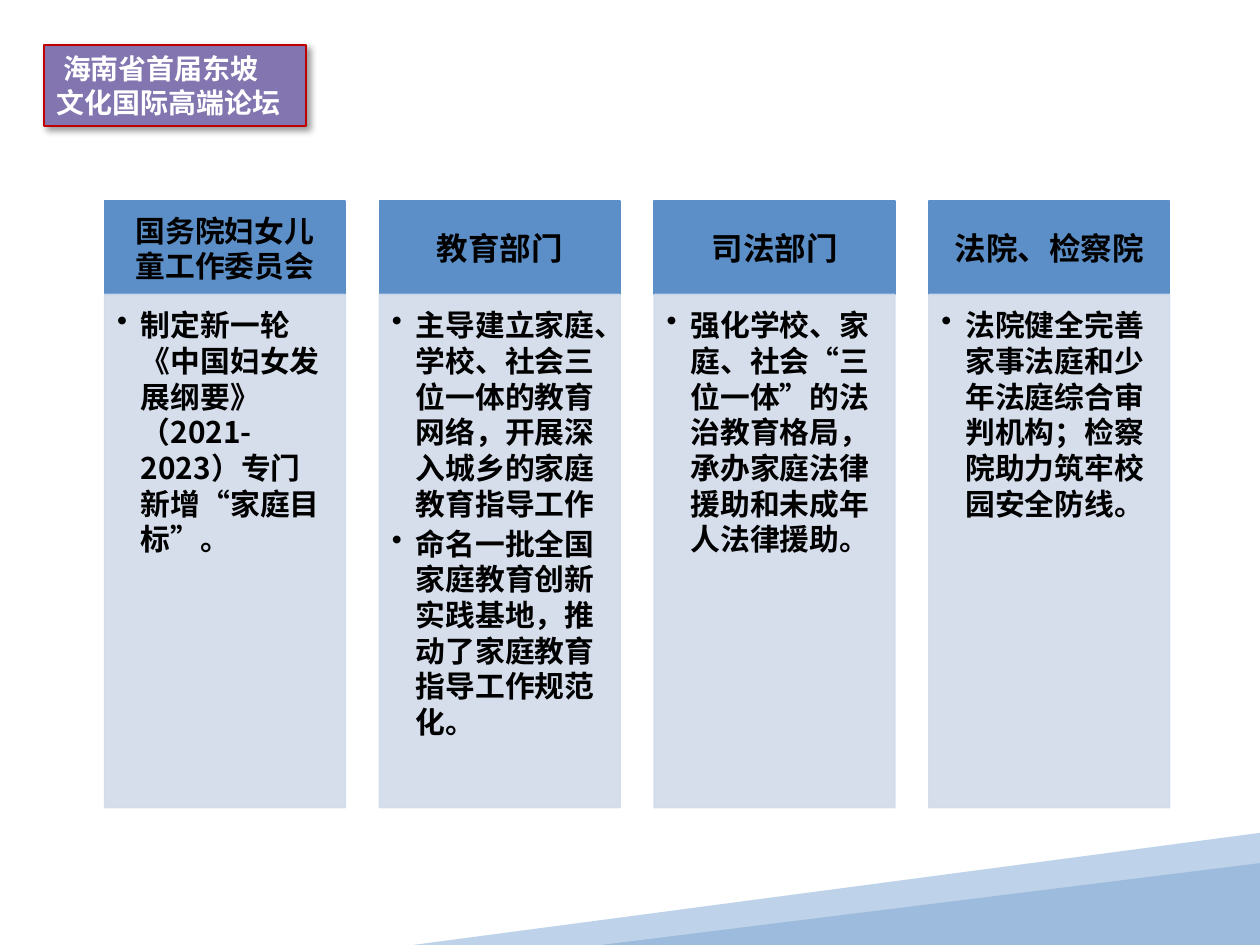
from dataclasses import dataclass

from lxml.etree import SubElement
from pptx import Presentation
from pptx.dml.color import RGBColor
from pptx.enum.lang import MSO_LANGUAGE_ID
from pptx.enum.shapes import MSO_SHAPE
from pptx.enum.text import MSO_ANCHOR, MSO_AUTO_SIZE, PP_ALIGN
from pptx.oxml.ns import qn
from pptx.util import Cm, Pt


@dataclass(frozen=True)
class Theme:
    font: str = "Noto Sans CJK SC"
    ink: str = "000000"
    heading_fill: str = "5C8FC7"
    duties_fill: str = "D2DBEB"
    badge_fill: str = "8376B0"
    badge_line: str = "C00000"
    badge_ink: str = "FFFFFF"
    light_wave: str = "BED2E9"
    deep_wave: str = "9DBCDD"
    badge_size: float = 16
    heading_size: float = 18
    text_size: float = 17
    line_factor: float = 1.2


FORUM = [" 海南省首届东坡", "文化国际高端论坛"]

DEPARTMENTS = [
    ("国务院妇女儿童工作委员会",
     ["制定新一轮《中国妇女发展纲要》（2021-2023）专门新增“家庭目标”。"]),
    ("教育部门",
     ["主导建立家庭、学校、社会三位一体的教育网络，开展深入城乡的家庭教育指导工作",
      "命名一批全国家庭教育创新实践基地，推动了家庭教育指导工作规范化。"]),
    ("司法部门",
     ["强化学校、家庭、社会“三位一体”的法治教育格局，承办家庭法律援助和未成年人法律援助。"]),
    ("法院、检察院",
     ["法院健全完善家事法庭和少年法庭综合审判机构；检察院助力筑牢校园安全防线。"]),
]

COLUMN_LEFT, COLUMN_PITCH, COLUMN_WIDTH = 2.11, 5.54, 4.85
HEADING_TOP, HEADING_HEIGHT, DUTIES_HEIGHT = 4.06, 1.88, 10.34
LONGEST_ONE_LINE_HEADING = 6


def set_all(target, values):
    for name, value in values.items():
        setattr(target, name, value)


class SlideBuilder:
    def __init__(self, slide, theme):
        self.slide = slide
        self.theme = theme

    def paint(self, shape, fill, line=None):
        shape.shadow.inherit = False
        shape.fill.solid()
        shape.fill.fore_color.rgb = RGBColor.from_string(fill)
        if line:
            shape.line.color.rgb = RGBColor.from_string(line)
            shape.line.width = Pt(1)
        else:
            shape.line.fill.background()

    def put_text(self, shape, lines, size, color, frame, paragraph):
        """Fill a shape with one paragraph per line, all in the same format."""
        set_all(shape.text_frame, {"word_wrap": True, **frame})
        shape.text_frame.text = "\n".join(lines)
        for item in shape.text_frame.paragraphs:
            set_all(item, {"line_spacing": Pt(round(size * self.theme.line_factor, 1)),
                           "space_before": Pt(0), **paragraph})
            for run in item.runs:
                set_all(run.font, {"name": self.theme.font, "size": Pt(size), "bold": True,
                                   "language_id": MSO_LANGUAGE_ID.SIMPLIFIED_CHINESE})
                run.font.color.rgb = RGBColor.from_string(color)
                SubElement(run.font._element, qn("a:ea"), typeface=self.theme.font)

    def waves(self):
        outline = self.slide.shapes.build_freeform(Cm(25.4), Cm(16.79))
        corners = [(25.4, 18.9), (17.09, 19.05), (8.33, 19.05)]
        outline.add_line_segments([(Cm(x), Cm(y)) for x, y in corners])
        self.paint(outline.convert_to_shape(), self.theme.light_wave)
        front = self.slide.shapes.add_shape(
            MSO_SHAPE.ISOSCELES_TRIANGLE, Cm(12.12), Cm(17.4), Cm(13.28), Cm(1.65))
        front.adjustments[0] = 1
        self.paint(front, self.theme.deep_wave)

    def badge(self, lines):
        title = self.slide.shapes.title
        set_all(title, {"left": Cm(0.89), "top": Cm(0.91),
                        "width": Cm(5.28), "height": Cm(1.63)})
        self.paint(title, self.theme.badge_fill, self.theme.badge_line)
        effects = title._element.spPr.find(qn("a:effectLst"))
        shadow = SubElement(effects, qn("a:outerShdw"), blurRad=str(Pt(4)),
                            dist=str(Pt(3)), dir="2700000", algn="tl", rotWithShape="0")
        tint = SubElement(shadow, qn("a:srgbClr"), val=self.theme.ink)
        SubElement(tint, qn("a:alpha"), val="40000")
        self.put_text(title, lines, self.theme.badge_size, self.theme.badge_ink,
                      {"auto_size": MSO_AUTO_SIZE.NONE, "vertical_anchor": MSO_ANCHOR.TOP},
                      {"alignment": PP_ALIGN.LEFT})

    def panel(self, left, top, height, fill):
        shape = self.slide.shapes.add_shape(
            MSO_SHAPE.RECTANGLE, Cm(left), Cm(top), Cm(COLUMN_WIDTH), Cm(height))
        self.paint(shape, fill, fill)
        return shape

    def heading(self, left, department):
        theme = self.theme
        one_line = len(department) <= LONGEST_ONE_LINE_HEADING
        size = theme.heading_size if one_line else theme.text_size
        panel = self.panel(left, HEADING_TOP, HEADING_HEIGHT, theme.heading_fill)
        self.put_text(panel, [department], size, theme.ink,
                      {"vertical_anchor": MSO_ANCHOR.MIDDLE,
                       "margin_left": Cm(0.34), "margin_right": Cm(0.34),
                       "margin_top": Cm(0.2), "margin_bottom": Cm(0.2)},
                      {"alignment": PP_ALIGN.CENTER})

    def duties(self, left, lines):
        theme = self.theme
        panel = self.panel(left, HEADING_TOP + HEADING_HEIGHT, DUTIES_HEIGHT,
                           theme.duties_fill)
        for color in panel._element.spPr.iter(qn("a:srgbClr")):
            SubElement(color, qn("a:alpha"), val="90000")
        self.put_text(panel, lines, theme.text_size, theme.ink,
                      {"vertical_anchor": MSO_ANCHOR.TOP,
                       "margin_left": Cm(0.25), "margin_right": Cm(0.34),
                       "margin_top": Cm(0.25), "margin_bottom": Cm(0.38)},
                      {"alignment": PP_ALIGN.LEFT, "level": 1, "space_after": Pt(2.5)})
        for item in panel.text_frame.paragraphs:
            layout = item._p.get_or_add_pPr()
            layout.set("marL", str(Cm(0.48)))
            layout.set("indent", str(-Cm(0.48)))
            SubElement(layout, qn("a:buChar"), char="•")


def main():
    deck = Presentation()
    set_all(deck, {"slide_width": Cm(25.4), "slide_height": Cm(19.05)})
    title_only = deck.slide_layouts.get_by_name("Title Only")
    builder = SlideBuilder(deck.slides.add_slide(title_only), Theme())
    builder.waves()
    for index, (department, lines) in enumerate(DEPARTMENTS):
        left = COLUMN_LEFT + index * COLUMN_PITCH
        builder.heading(left, department)
        builder.duties(left, lines)
    builder.badge(FORUM)
    deck.save("out.pptx")


if __name__ == "__main__":
    main()
